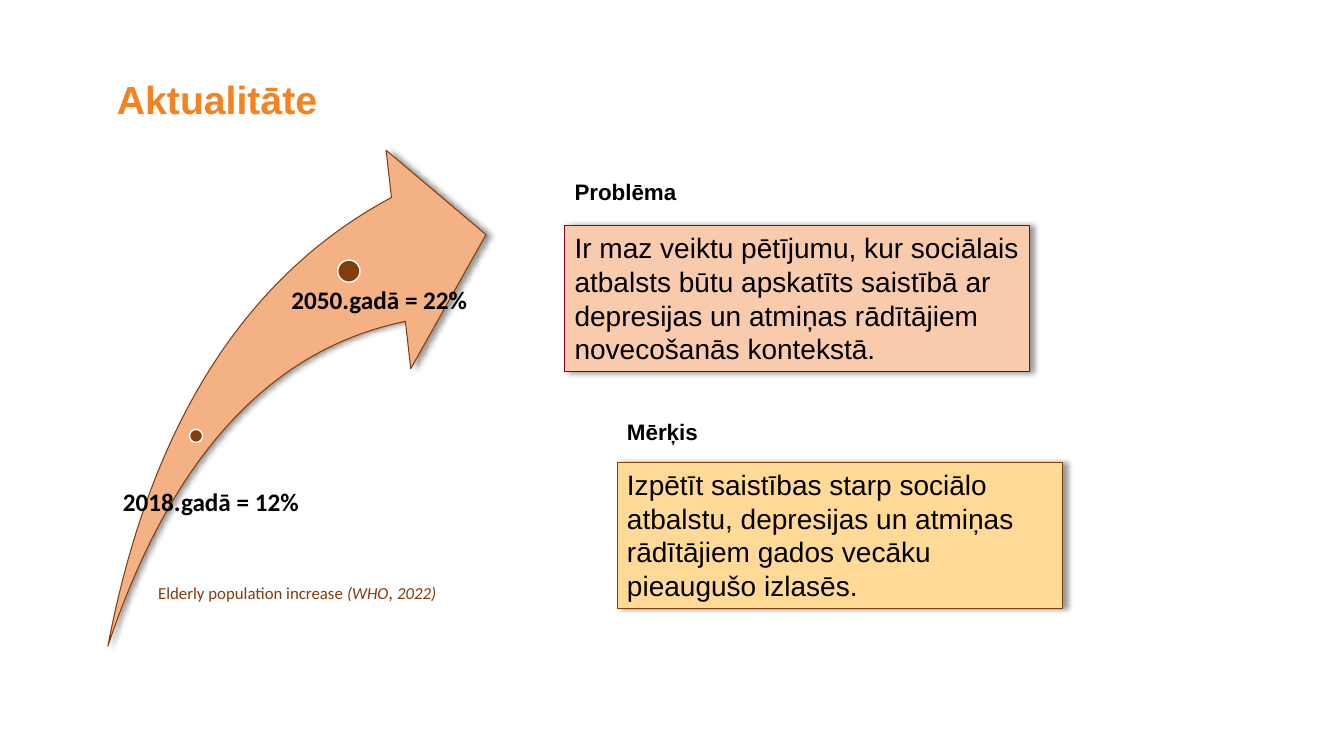
from dataclasses import dataclass

from lxml import etree
from pptx import Presentation
from pptx.dml.color import RGBColor
from pptx.enum.shapes import MSO_SHAPE as Shape
from pptx.enum.text import MSO_ANCHOR as Anchor, MSO_AUTO_SIZE as Auto, PP_ALIGN as Align
from pptx.oxml.ns import qn
from pptx.util import Inches, Pt

BROWN, BLACK, WHITE = "843C0B", "000000", "FFFFFF"
TIGHT = (0, 0, 0, 0)
NORMAL = (0.1, 0.05, 0.1, 0.05)


@dataclass
class Point:
    label: str
    dot: tuple  # left, top, diameter
    box: tuple  # left, top, width, height
    inset: float


@dataclass
class Block:
    head: str
    body: str
    left: float
    head_top: float
    top: float
    width: float
    fill: str
    line: str


POINTS = [
    Point("2018.gadā = 12%", (1.88, 4.26, 0.13), (1.15, 4.86, 1.97, 0.42), 0.07),
    Point("2050.gadā = 22%", (3.35, 2.58, 0.22), (2.77, 2.85, 2.21, 2.37), 0.12),
]
BLOCKS = [
    Block("Problēma",
          "Ir maz veiktu pētījumu, kur sociālais atbalsts būtu apskatīts "
          "saistībā ar depresijas un atmiņas rādītājiem novecošanās kontekstā.",
          5.6, 1.72, 2.24, 4.61, "F8CBAD", "8E001C"),
    Block("Mērķis",
          "Izpētīt saistības starp sociālo atbalstu, depresijas un atmiņas "
          "rādītājiem gados vecāku pieaugušo izlasēs.",
          6.12, 4.1, 4.59, 4.42, "FFDA96", BROWN),
]


def color(code: str) -> RGBColor:
    return RGBColor.from_string(code)


def shade(shape) -> None:
    """Soft shadow to the right of the shape."""
    props = shape._element.spPr
    for old in props.findall(qn("a:effectLst")):
        props.remove(old)
    group = etree.SubElement(props, qn("a:effectLst"))
    outer = etree.SubElement(group, qn("a:outerShdw"), blurRad=str(Pt(4)),
                             dist=str(Pt(3)), dir="0", algn="l", rotWithShape="0")
    tint = etree.SubElement(outer, qn("a:srgbClr"), val=BLACK)
    etree.SubElement(tint, qn("a:alpha"), val="40000")


def draw(slide, kind, box: tuple, fill: str, line: str, width: float = 0.75,
         shadow: bool = True):
    shape = slide.shapes.add_shape(kind, *map(Inches, box))
    shape.shadow.inherit = False
    shape.fill.solid()
    shape.fill.fore_color.rgb = color(fill)
    shape.line.color.rgb = color(line)
    shape.line.width = Pt(width)
    if shadow:
        shade(shape)
    return shape


def write(shape, *runs: tuple, font: str = "Arial", tone: str = BLACK,
          bold: bool = False, inset: tuple = NORMAL, space: float = 1.0,
          grow: bool = True) -> None:
    """Each run is text, size and, if wanted, an italic flag."""
    frame = shape.text_frame
    frame.word_wrap = True
    frame.auto_size = Auto.SHAPE_TO_FIT_TEXT if grow else Auto.NONE
    frame.vertical_anchor = Anchor.TOP
    (frame.margin_left, frame.margin_top,
     frame.margin_right, frame.margin_bottom) = map(Inches, inset)
    para = frame.paragraphs[0]
    para.alignment = Align.LEFT
    para.line_spacing = space
    for text, size, *slant in runs:
        run = para.add_run()
        run.text = text
        run.font.name = font
        run.font.size = Pt(size)
        run.font.bold = bold
        run.font.italic = bool(slant)
        run.font.color.rgb = color(tone)


def label(slide, box: tuple, *runs: tuple, **style) -> None:
    write(slide.shapes.add_textbox(*map(Inches, box)), *runs, **style)


def main() -> None:
    deck = Presentation()
    deck.slide_width, deck.slide_height = Inches(13.33), Inches(7.5)
    slide = deck.slides.add_slide(deck.slide_layouts[6])

    # Title
    label(slide, (1.16, 0.8, 11.02, 1.02), ("Aktualitāte", 28), tone="F58220",
          bold=True, inset=TIGHT, space=0.9, grow=False)

    # Growth arrow with its two years
    arrow = draw(slide, Shape.SWOOSH_ARROW, (1.07, 1.49, 3.75, 4.92), "F4B183", BROWN)
    arrow.adjustments[0] = arrow.adjustments[1] = 0.25
    for point in POINTS:
        left, top, size = point.dot
        draw(slide, Shape.OVAL, (left, top, size, size), BROWN, WHITE, 1, shadow=False)
        label(slide, point.box, (point.label, 18), font="Calibri", bold=True,
              inset=(point.inset, 0, 0, 0), space=0.9, grow=False)

    # Source line
    label(slide, (1.47, 5.7, 3.43, 0.34), ("Elderly population increase ", 12),
          ("(WHO", 12, True), (",", 14, True), (" 2022)", 12, True),
          font="Calibri", tone=BROWN)

    # Problem and aim
    for block in BLOCKS:
        card = draw(slide, Shape.RECTANGLE, (block.left, block.top, block.width, 1.45),
                    block.fill, block.line)
        write(card, (block.body, 20))
        label(slide, (block.left, block.head_top, 1.68, 0.37), (block.head, 16), bold=True)

    deck.save("out.pptx")


if __name__ == "__main__":
    main()
